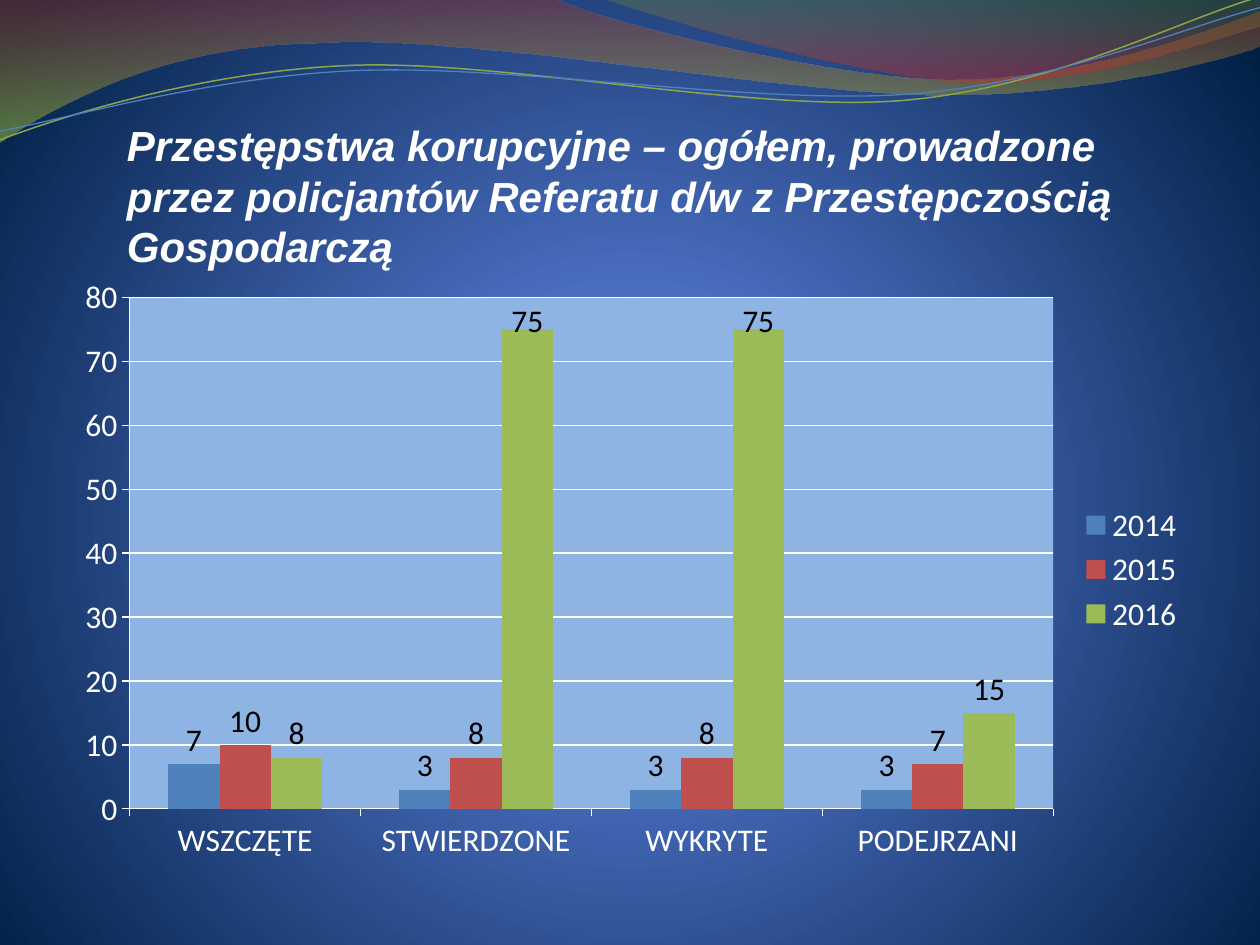
import math
import pptx
import pptx.util
import pptx.chart.data
import pptx.dml.color
import pptx.enum.chart
import pptx.enum.text
import pptx.oxml
import pptx.oxml.ns
from pptx.util import Inches

COLORS = {
    "white": "FFFFFF", "black": "000000", "plot": "8EB4E3",
    "2014": "4F81BD", "2015": "C0504D", "2016": "9BBB59",
    "green_line": "89A54F", "blue_line": "4F81BD",
    "glow": "4D75D6", "blue": "4E72C7", "navy": "001F44",
    "wine": "973330", "lime": "95C238", "olive": "769537", "red": "BE3330",
}
NS = pptx.oxml.ns.nsdecls("a", "c")
CHART_FONT = {"name": "Calibri", "size": pptx.util.Pt(18)}
TITLE_FONT = {"name": "Arial", "size": pptx.util.Pt(24), "bold": True, "italic": True}
STRAND_TILT = 357.3
BANDS = [
    ((-0.01, -0.01, 10.02, 1.14),
     [(0, -0.01), (4.4, -0.01),
      (4.76, 0.17, 6.64, 0.63, 7.58, 0.63), (8.53, 0.63, 9.58, 0.26, 10, 0.09),
      (10.01, 0.36), (9.83, 0.44, 8.7, 0.76, 7.46, 0.75),
      (6.22, 0.75, 3.82, 0.28, 2.57, 0.34), (1.29, 0.35, 0.46, 0.83, -0.01, 1.13),
      (0, -0.01)],
     [(0, "wine", 45), (100, "lime", 55)]),
    ((4.79, -0.01, 5.21, 0.7),
     [(4.79, -0.01), (5.09, 0.11, 6.82, 0.62, 7.69, 0.65),
      (8.56, 0.69, 9.61, 0.32, 10, 0.21), (10, 0), (4.79, -0.01)],
     [(0, "olive", 30), (80, "red", 45)]),
]
STRANDS = [
    ((-0.02, 0.22, 10.02, 0.71),
     [(0, 1.11), (0.48, 0.93, 1.58, 0.57, 2.77, 0.52),
      (3.95, 0.47, 5.93, 0.89, 7.13, 0.8), (8.33, 0.71, 9.38, 0.15, 9.98, -0.02)],
     "green_line", 0.85),
    ((-0.02, 0.3, 10.03, 0.58),
     [(0, 1.04), (0.47, 0.96, 1.64, 0.61, 2.83, 0.56),
      (4.03, 0.51, 5.97, 0.83, 7.17, 0.75), (8.36, 0.67, 9.41, 0.21, 10, 0.06)],
     "blue_line", 0.75),
]


def rgb(name):
    """Return the named colour."""
    return pptx.dml.color.RGBColor.from_string(COLORS[name])


def apply(target, values):
    """Set each attribute of the target from a dict."""
    for key, value in values.items():
        setattr(target, key, value)


def style_font(font, values, color):
    """Format a font and colour it."""
    apply(font, values)
    font.color.rgb = rgb(color)


def replace_gradient(fill, parent, stops, direction):
    """Give a fill position, colour and opacity stops in one direction."""
    fill.gradient()
    marks = "".join(
        f'<a:gs pos="{place * 1000}"><a:srgbClr val="{COLORS[name]}">'
        f'<a:alpha val="{opacity * 1000}"/></a:srgbClr></a:gs>'
        for place, name, opacity in stops)
    old = parent.find(".//" + pptx.oxml.ns.qn("a:gradFill"))
    old.getparent().replace(old, pptx.oxml.parse_xml(
        f'<a:gradFill {NS} rotWithShape="1"><a:gsLst>{marks}</a:gsLst>{direction}</a:gradFill>'))


def local_point(x, y, box, tilt):
    """Convert a slide point to a point tag inside a tilted box."""
    left, top, width, height = box
    across, down = x - left - width / 2, y - top - height / 2
    turn = math.radians(-tilt)
    turned_x = across * math.cos(turn) - down * math.sin(turn) + width / 2
    turned_y = across * math.sin(turn) + down * math.cos(turn) + height / 2
    return f'<a:pt x="{int(Inches(turned_x))}" y="{int(Inches(turned_y))}"/>'


def draw_outline(slide, box, steps, tilt=0, close=False):
    """Draw an outline of corners and cubic curves in the given box."""
    left, top, width, height = (Inches(length) for length in box)
    builder = slide.shapes.build_freeform(left, top, scale=1.0)
    builder.add_line_segments(
        [(left + width, top), (left + width, top + height), (left, top + height)], close=close)
    outline = builder.convert_to_shape()
    outline.shadow.inherit = False
    outline.rotation = tilt
    route = outline._element.find(".//" + pptx.oxml.ns.qn("a:path"))
    for piece in list(route):
        route.remove(piece)
    for index, step in enumerate(steps):
        tag = "cubicBezTo" if len(step) == 6 else "lnTo" if index else "moveTo"
        points = "".join(local_point(x, y, box, tilt) for x, y in zip(step[::2], step[1::2]))
        route.append(pptx.oxml.parse_xml(f"<a:{tag} {NS}>{points}</a:{tag}>"))
    if close:
        route.append(pptx.oxml.parse_xml(f"<a:close {NS}/>"))
    return outline


def add_backdrop(slide):
    """Fill the slide with the blue radial gradient."""
    replace_gradient(
        slide.background.fill, slide._element,
        [(0, "glow", 100), (25, "blue", 100), (100, "navy", 100)],
        '<a:path path="circle"><a:fillToRect l="10000" t="110000" r="10000" b="100000"/></a:path>')


def add_waves(slide):
    """Draw the bands and strands along the top edge."""
    for box, steps, stops in BANDS:
        band = draw_outline(slide, box, steps, close=True)
        band.line.fill.background()
        replace_gradient(band.fill, band._element, stops, '<a:lin ang="5400000" scaled="0"/>')
    for box, steps, color, width in STRANDS:
        strand = draw_outline(slide, box, steps, STRAND_TILT)
        strand.fill.background()
        strand.line.color.rgb = rgb(color)
        strand.line.width = pptx.util.Pt(width)


def add_heading(slide, left, top, width, height):
    """Write the slide heading at the foot of its box."""
    heading = slide.shapes.add_textbox(
        Inches(left), Inches(top), Inches(width), Inches(height)).text_frame
    apply(heading, {"word_wrap": True, "margin_bottom": Inches(0.08),
                    "vertical_anchor": pptx.enum.text.MSO_ANCHOR.BOTTOM})
    paragraph = heading.paragraphs[0]
    paragraph.text = ("Przestępstwa korupcyjne – ogółem, prowadzone przez policjantów "
                      "Referatu d/w z Przestępczością Gospodarczą")
    style_font(paragraph.runs[0].font, TITLE_FONT, "white")


def layout(**values):
    """Build a manual chart layout element."""
    parts = "".join(f'<c:{key} val="{value}"/>' for key, value in values.items())
    return pptx.oxml.parse_xml(
        f"<c:layout {NS}><c:manualLayout>{parts}</c:manualLayout></c:layout>")


def style_plot_area(chart, width, height):
    """Place the plot area and fill it."""
    area = chart._chartSpace.chart.plotArea
    for old in area.findall(pptx.oxml.ns.qn("c:layout")):
        area.remove(old)
    area.insert(0, layout(layoutTarget="inner", xMode="edge", yMode="edge",
                          x=0.53 / width, y=0.24 / height,
                          w=7.33 / width, h=4.06 / height))
    area.append(pptx.oxml.parse_xml(
        f'<c:spPr {NS}><a:solidFill><a:srgbClr val="{COLORS["plot"]}"/></a:solidFill></c:spPr>'))


def add_crime_chart(slide, left, top, width, height):
    """Chart the corruption cases by stage and year."""
    cases = pptx.chart.data.CategoryChartData(number_format="0")
    cases.categories = ["WSZCZĘTE", "STWIERDZONE", "WYKRYTE", "PODEJRZANI"]
    for year, counts in {"2014": (7, 3, 3, 3), "2015": (10, 8, 8, 7),
                         "2016": (8, 75, 75, 15)}.items():
        cases.add_series(year, counts)
    chart = slide.shapes.add_chart(
        pptx.enum.chart.XL_CHART_TYPE.COLUMN_CLUSTERED,
        Inches(left), Inches(top), Inches(width), Inches(height), cases).chart
    chart.has_title = False
    style_font(chart.font, CHART_FONT, "white")
    chart.has_legend = True
    apply(chart.legend, {"position": pptx.enum.chart.XL_LEGEND_POSITION.RIGHT,
                         "include_in_layout": False})
    apply(chart.plots[0], {"gap_width": 150, "overlap": 0, "vary_by_categories": False})
    apply(chart.value_axis, {"minimum_scale": 0, "maximum_scale": 80, "major_unit": 10,
                             "has_major_gridlines": True})
    for axis in (chart.category_axis, chart.value_axis):
        axis.major_tick_mark = pptx.enum.chart.XL_TICK_MARK.OUTSIDE
        axis.format.line.color.rgb = rgb("white")
    chart.value_axis.major_gridlines.format.line.color.rgb = rgb("white")
    above = pptx.enum.chart.XL_LABEL_POSITION.OUTSIDE_END
    for year in chart.plots[0].series:
        year.format.fill.solid()
        year.format.fill.fore_color.rgb = rgb(year.name)
        apply(year.data_labels, {"show_value": True, "position": above})
        style_font(year.data_labels.font, CHART_FONT, "black")
    for stage in (1, 2):
        label = year.points[stage].data_label
        style_font(label.font, CHART_FONT, "black")
        label.position = above
    for label in year._element.iter(pptx.oxml.ns.qn("c:dLbl")):
        label.insert(1, layout(x=0, y=0.13 / height))
    style_plot_area(chart, width, height)


def main():
    """Build and save the presentation."""
    deck = pptx.Presentation()
    apply(deck, {"slide_width": Inches(10), "slide_height": Inches(7.5)})
    slide = deck.slides.add_slide(deck.slide_layouts[6])
    add_backdrop(slide)
    add_waves(slide)
    add_heading(slide, 0.91, -0.29, 8.43, 2.52)
    add_crime_chart(slide, 0.5, 2.12, 9, 4.8)
    deck.save("out.pptx")


if __name__ == "__main__":
    main()
